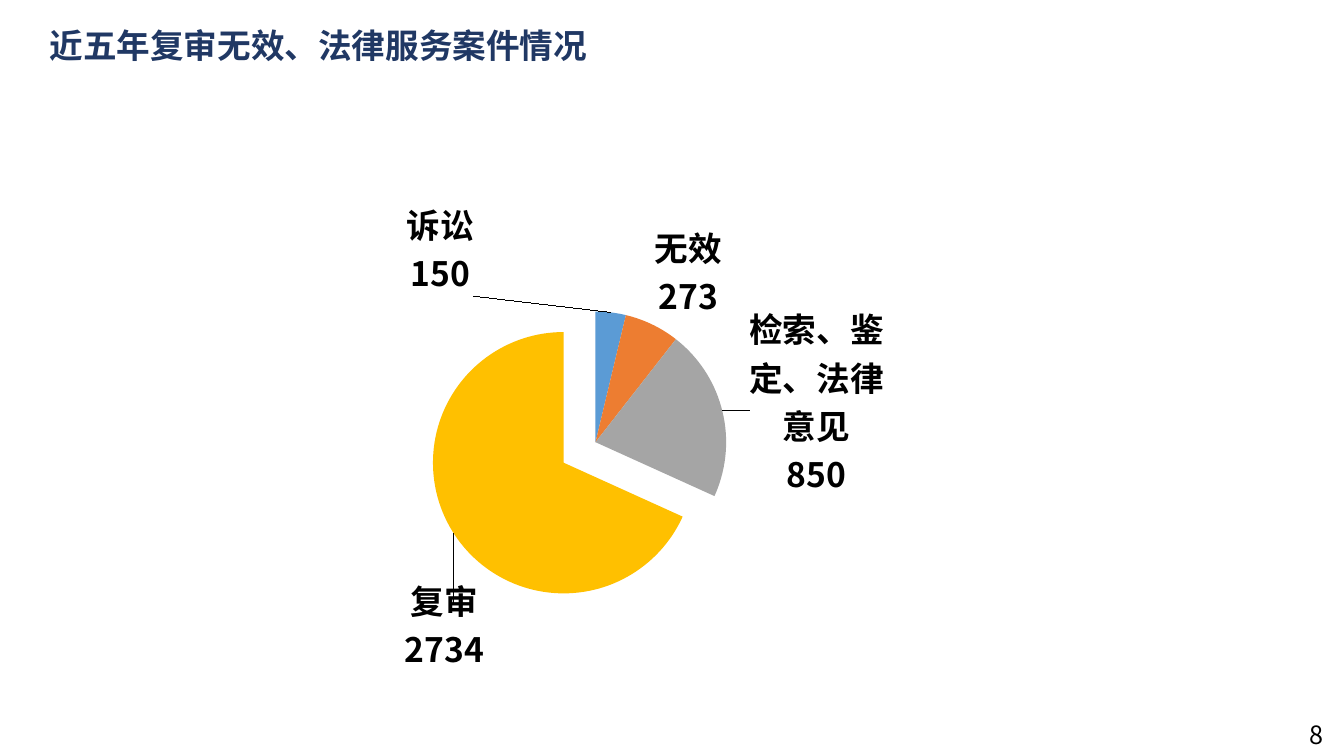
"""Build the slide on re-examination, invalidation and legal service cases."""
from lxml import etree
from pptx import Presentation
from pptx.chart.data import CategoryChartData
from pptx.dml.color import RGBColor
from pptx.enum.chart import XL_CHART_TYPE, XL_LABEL_POSITION
from pptx.enum.text import MSO_AUTO_SIZE
from pptx.oxml.ns import qn
from pptx.util import Cm, Pt

PIE = XL_CHART_TYPE.PIE
OUTSIDE = XL_LABEL_POSITION.OUTSIDE_END
FIT_SHAPE = MSO_AUTO_SIZE.SHAPE_TO_FIT_TEXT
FONT = "Noto Sans CJK SC"
COLORS = {"title": "203864", "text": "000000", "诉讼": "5B9BD5", "无效": "ED7D31",
          "检索、鉴定、法律意见": "A5A5A5", "复审": "FFC000"}
CASES = {"诉讼": 150, "无效": 273, "检索、鉴定、法律意见": 850, "复审": 2734}
LABEL_SHIFTS = {"诉讼": (-0.29, -0.02), "检索、鉴定、法律意见": (0.03, 0.17),
                "复审": (0.05, 0.13)}
EXPLODED = {"复审": 29}
PLOT_AREA = {"x": 0.28, "y": 0.3, "w": 0.37, "h": 0.51}


class Deck:
    def __init__(self):
        self.prs = Presentation()
        self.prs.slide_width, self.prs.slide_height = Cm(33.87), Cm(19.05)
        self.s = self.prs.slides.add_slide(self.prs.slide_layouts[6])

    def style(self, font, size, color, bold=False):
        font.name, font.size, font.bold = FONT, Pt(size), bold
        font.color.rgb = RGBColor.from_string(COLORS[color])
        for tag in ("a:ea", "a:cs"):
            etree.SubElement(font._element, qn(tag)).set("typeface", FONT)

    def text(self, text, box, size, color="text", bold=False, grow=False):
        sp = self.s.shapes.add_textbox(*map(Cm, box))
        tf = sp.text_frame
        tf.word_wrap = True
        if grow:
            tf.auto_size = FIT_SHAPE
        tf.text = text
        self.style(tf.paragraphs[0].runs[0].font, size, color, bold)

    def layout(self, values, inner=False):
        layout = etree.Element(qn("c:layout"))
        manual = etree.SubElement(layout, qn("c:manualLayout"))
        modes = {"layoutTarget": "inner", "xMode": "edge", "yMode": "edge"} if inner else {}
        for tag, value in {**modes, **values}.items():
            etree.SubElement(manual, qn(f"c:{tag}")).set("val", str(value))
        return layout

    def show_name_and_value(self, labels):
        for flag in ("showVal", "showCatName"):
            labels.find(qn(f"c:{flag}")).set("val", "1")
        for flag in ("showLegendKey", "showSerName", "showPercent"):
            labels.find(qn(f"c:{flag}")).set("val", "0")
        separator = etree.Element(qn("c:separator"))
        separator.text = "\n"
        labels.find(qn("c:showBubbleSize")).addnext(separator)

    def pie(self, cases, box):
        data = CategoryChartData()
        data.categories = list(cases)
        data.add_series("Series 1", list(cases.values()))
        chart = self.s.shapes.add_chart(PIE, *map(Cm, box), data).chart
        chart.has_legend = chart.has_title = False
        self.style(chart.font, 20, "text")
        plot = chart.plots[0]
        plot.vary_by_categories = True
        area = plot._element.getparent()
        for old in area.findall(qn("c:layout")):
            area.remove(old)
        area.insert(0, self.layout(PLOT_AREA, inner=True))

        series = plot.series[0]
        labels = series.data_labels
        labels.position = OUTSIDE
        self.style(labels.font, 24, "text", True)
        self.show_name_and_value(labels._element)
        for i, name in enumerate(cases):
            point = series.points[i]
            point.format.fill.solid()
            point.format.fill.fore_color.rgb = RGBColor.from_string(COLORS[name])
            if name in EXPLODED:
                explosion = etree.Element(qn("c:explosion"))
                explosion.set("val", str(EXPLODED[name]))
                point.format._element.find(qn("c:spPr")).addprevious(explosion)
            if name in LABEL_SHIFTS:
                label = point.data_label
                label.position = OUTSIDE
                self.style(label.font, 24, "text", True)
                element = labels._element.xpath(f"c:dLbl[c:idx/@val='{i}']")[0]
                x, y = LABEL_SHIFTS[name]
                element.find(qn("c:idx")).addnext(self.layout({"x": x, "y": y}))
                self.show_name_and_value(element)


def main():
    deck = Deck()
    deck.text("近五年复审无效、法律服务案件情况", (1, 0.5, 15.35, 1.28), 24, "title", True, True)
    deck.text("8", (32.75, 18, 1.27, 1), 18)
    deck.pie(CASES, (6.73, 3.93, 17.8, 13))
    deck.prs.save("out.pptx")


if __name__ == "__main__":
    main()
